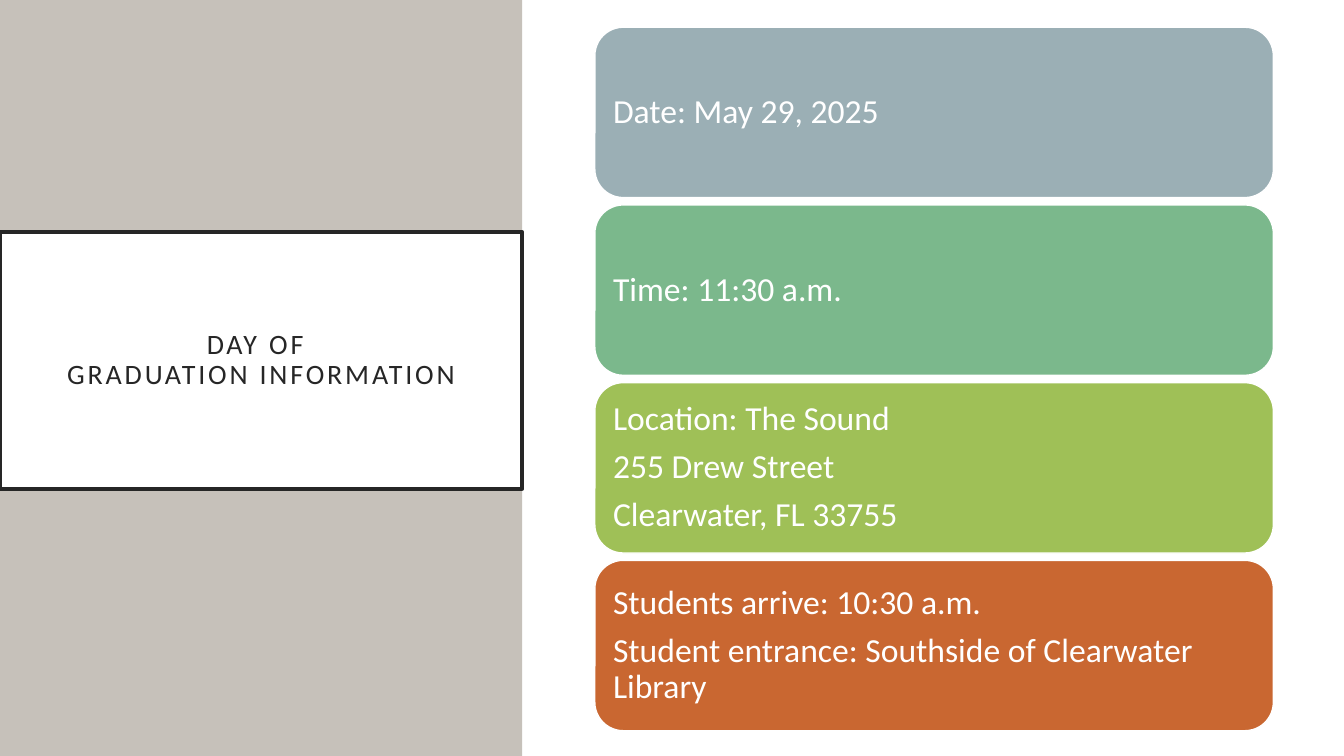
"""Build the graduation day slide: a title panel and four detail cards."""
from pptx import Presentation
from pptx.dml.color import RGBColor
from pptx.enum.shapes import MSO_SHAPE
from pptx.enum.text import MSO_ANCHOR, PP_ALIGN
from pptx.util import Inches, Pt

RECT, ROUND = MSO_SHAPE.RECTANGLE, MSO_SHAPE.ROUNDED_RECTANGLE
MIDDLE = MSO_ANCHOR.MIDDLE
LEFT, CENTER = PP_ALIGN.LEFT, PP_ALIGN.CENTER
WIDE, HIGH = 13.33, 7.5
SIDE = 5.18
COLORS = {
    "white": "FFFFFF", "ink": "262626", "stone": "C6C1BA",
    "slate": "9BAFB5", "green": "7BB88C", "lime": "9FC057", "rust": "C96731",
}
CARDS = [
    ("slate", ["Date: May 29, 2025"]),
    ("green", ["Time: 11:30 a.m."]),
    ("lime", ["Location: The Sound", "255 Drew Street", "Clearwater, FL 33755"]),
    ("rust", ["Students arrive: 10:30 a.m.",
              "Student entrance: Southside of Clearwater Library"]),
]
CARD_X, CARD_Y, CARD_W, CARD_H = 5.9, 0.27, 6.73, 1.69
STEP = 1.763


def add_box(kind, x, y, w, h, fill, line=None, weight=1):
    box = slide.shapes.add_shape(kind, Inches(x), Inches(y), Inches(w), Inches(h))
    box.shadow.inherit = False
    box.fill.solid()
    box.fill.fore_color.rgb = RGBColor.from_string(COLORS[fill])
    if line:
        box.line.color.rgb = RGBColor.from_string(COLORS[line])
        box.line.width = Pt(weight)
    else:
        box.line.fill.background()
    return box


def add_text(box, lines, size, color, align, inset, after=0):
    frame = box.text_frame
    frame.word_wrap = True
    frame.vertical_anchor = MIDDLE
    frame.margin_left = frame.margin_right = Inches(inset)
    frame.margin_top = frame.margin_bottom = Inches(inset)
    frame.text = "\n".join(lines)
    for para in frame.paragraphs:
        para.alignment = align
        para.line_spacing = 0.9
        para.space_after = Pt(after)
        para.font.name = "Calibri"
        para.font.size = Pt(size)
        para.font.color.rgb = RGBColor.from_string(COLORS[color])


deck = Presentation()
deck.slide_width, deck.slide_height = Inches(WIDE), Inches(HIGH)
slide = deck.slides.add_slide(deck.slide_layouts[6])

add_box(RECT, 0, 0, SIDE, HIGH, "stone")
title = add_box(RECT, 0, 2.3, SIDE, 2.55, "white", "ink", 2.5)
add_text(title, ["DAY OF \vGRADUATION INFORMATION"], 20, "ink", CENTER, 0.2)
for run in title.text_frame.paragraphs[0].runs:
    run.font._element.set("spc", "200")

for row, (fill, lines) in enumerate(CARDS):
    card = add_box(ROUND, CARD_X, CARD_Y + row * STEP, CARD_W, CARD_H, fill, "white")
    add_text(card, lines, 24, "white", LEFT, 0.1, 8.4)

deck.save("out.pptx")
